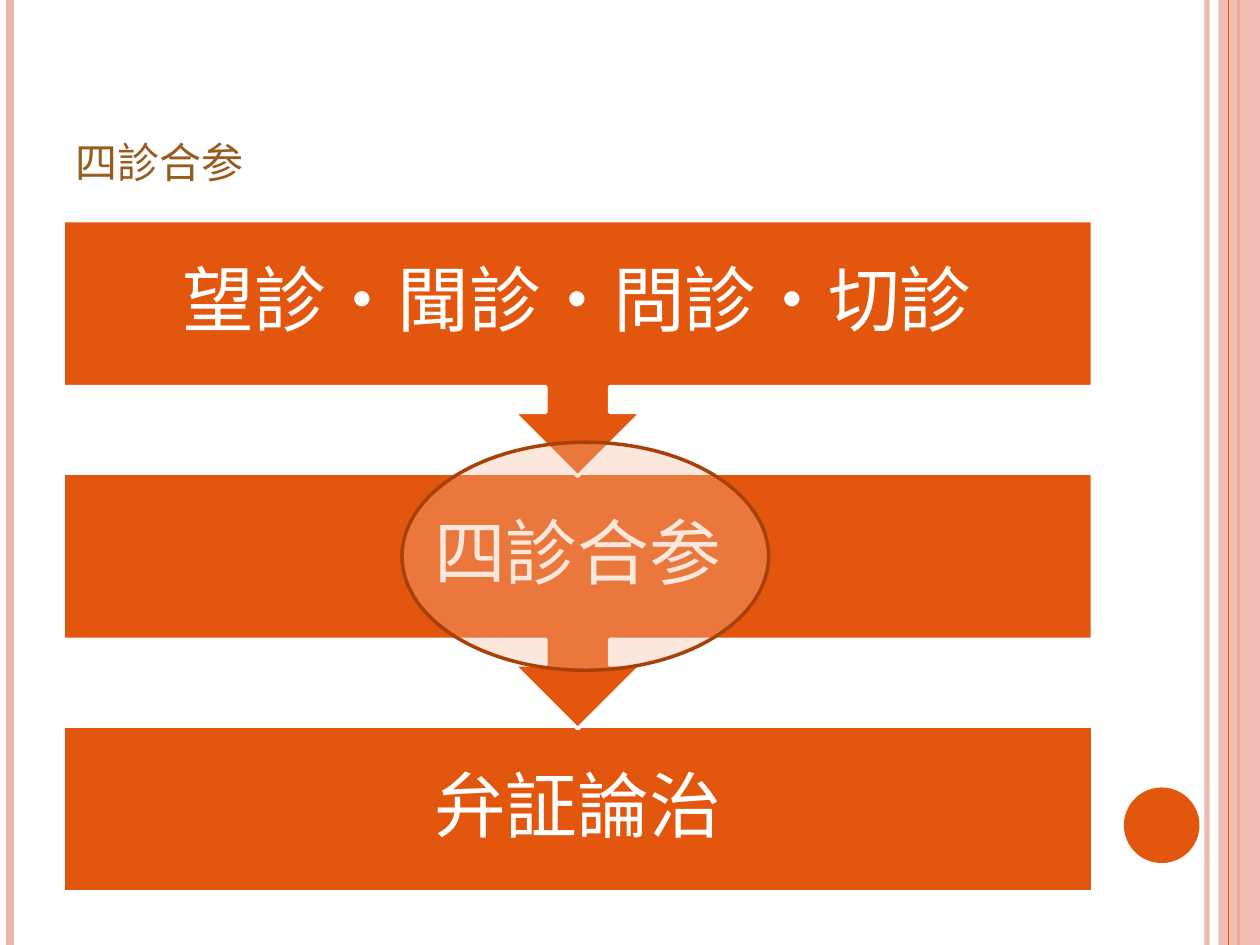
from lxml import etree
from pptx import Presentation
from pptx import util as u
from pptx.dml import color
from pptx.enum import shapes, text
from pptx.oxml import ns

WIDE, HIGH = 10, 7.5
LEFT, SPAN = 0.05 * WIDE, 8.17
TOP, STEP, BAND, CALL = 1.75, 2.005, 1.32, 2.03
PINK, RUST, WHITE = "EFB4AB", "E3560E", "FFFFFF"
STEPS = ["望診・聞診・問診・切診", "四診合参", "弁証論治"]
KIND = shapes.MSO_SHAPE


def tint(part, code, share=100):
    if hasattr(part, "solid"):
        part.solid()
        hue = part.fore_color
    else:
        hue = part.color
    hue.rgb = color.RGBColor.from_string(code)
    if share < 100:
        fill = part.fill if hasattr(part, "fill") else part
        node = fill._xPr.find(ns.qn("a:solidFill"))[0]
        etree.SubElement(node, ns.qn("a:alpha"), val=str(share * 1000))


def box(x, y, w, h):
    return [u.Inches(n) for n in (x, y, w, h)]


def rule(slide, x, code, width, share=100):
    line = slide.shapes.add_connector(
        shapes.MSO_CONNECTOR.STRAIGHT, *box(x, 0, x, HIGH))
    line.line.width = u.Pt(width)
    tint(line.line, code, share)
    etree.SubElement(line._element.spPr, ns.qn("a:effectLst"))


def form(slide, kind, area, code, edge=None, share=100):
    item = slide.shapes.add_shape(kind, *box(*area))
    item.shadow.inherit = False
    tint(item.fill, code, share)
    if edge:
        item.line.width = u.Pt(2)
        tint(item.line, edge)
    else:
        item.line.fill.background()
    return item


def label(slide, area, words, size, code, side, anchor, inset):
    frame = slide.shapes.add_textbox(*box(*area)).text_frame
    frame.word_wrap = True
    frame.vertical_anchor = anchor
    frame.margin_left = frame.margin_right = u.Inches(inset[0])
    frame.margin_top = frame.margin_bottom = u.Inches(inset[1])
    para = frame.paragraphs[0]
    para.alignment = side
    run = para.add_run()
    run.text = words
    run.font.size = u.Pt(size)
    run.font.name = "Calibri"
    tint(run.font, code)
    return para, run


def trim(slide):
    rule(slide, 9.58, PINK, 3, 93)
    rule(slide, 0.08, PINK, 4.5)
    rule(slide, 9.83, RUST, 1.5)
    form(slide, KIND.RECTANGLE, (9.67, 0, 0.33, HIGH), PINK, share=87)
    rule(slide, 9.75, RUST, 0.75)
    form(slide, KIND.OVAL, (8.92, 6.25, 0.6, 0.6), RUST)


def head(slide):
    para, run = label(slide, (LEFT, 0.3, SPAN, 1.25), "四診合参", 30, "975C1E",
                      text.PP_ALIGN.LEFT, text.MSO_ANCHOR.BOTTOM, (0.1, 0.05))
    run.font._element.set("cap", "small")


def flow(slide):
    last = len(STEPS) - 1
    for row in range(last, -1, -1):
        y = TOP + row * STEP
        if row == last:
            form(slide, KIND.RECTANGLE, (LEFT, y, SPAN, BAND), RUST, WHITE)
        else:
            call = form(slide, KIND.UP_ARROW_CALLOUT,
                        (LEFT, y, SPAN, CALL), RUST, WHITE)
            call.rotation = 180
        para, run = label(slide, (LEFT, y, SPAN, BAND), STEPS[row], 41, WHITE,
                          text.PP_ALIGN.CENTER, text.MSO_ANCHOR.MIDDLE,
                          (0.32, 0.32))
        para.line_spacing = 0.9


def main():
    deck = Presentation()
    deck.slide_width, deck.slide_height = u.Inches(WIDE), u.Inches(HIGH)
    slide = deck.slides.add_slide(deck.slide_layouts[6])
    trim(slide)
    head(slide)
    flow(slide)
    form(slide, KIND.OVAL, (3.19, 3.51, 2.91, 1.81), "F9BA9A", "A8400A", 34)
    deck.save("out.pptx")


if __name__ == "__main__":
    main()
